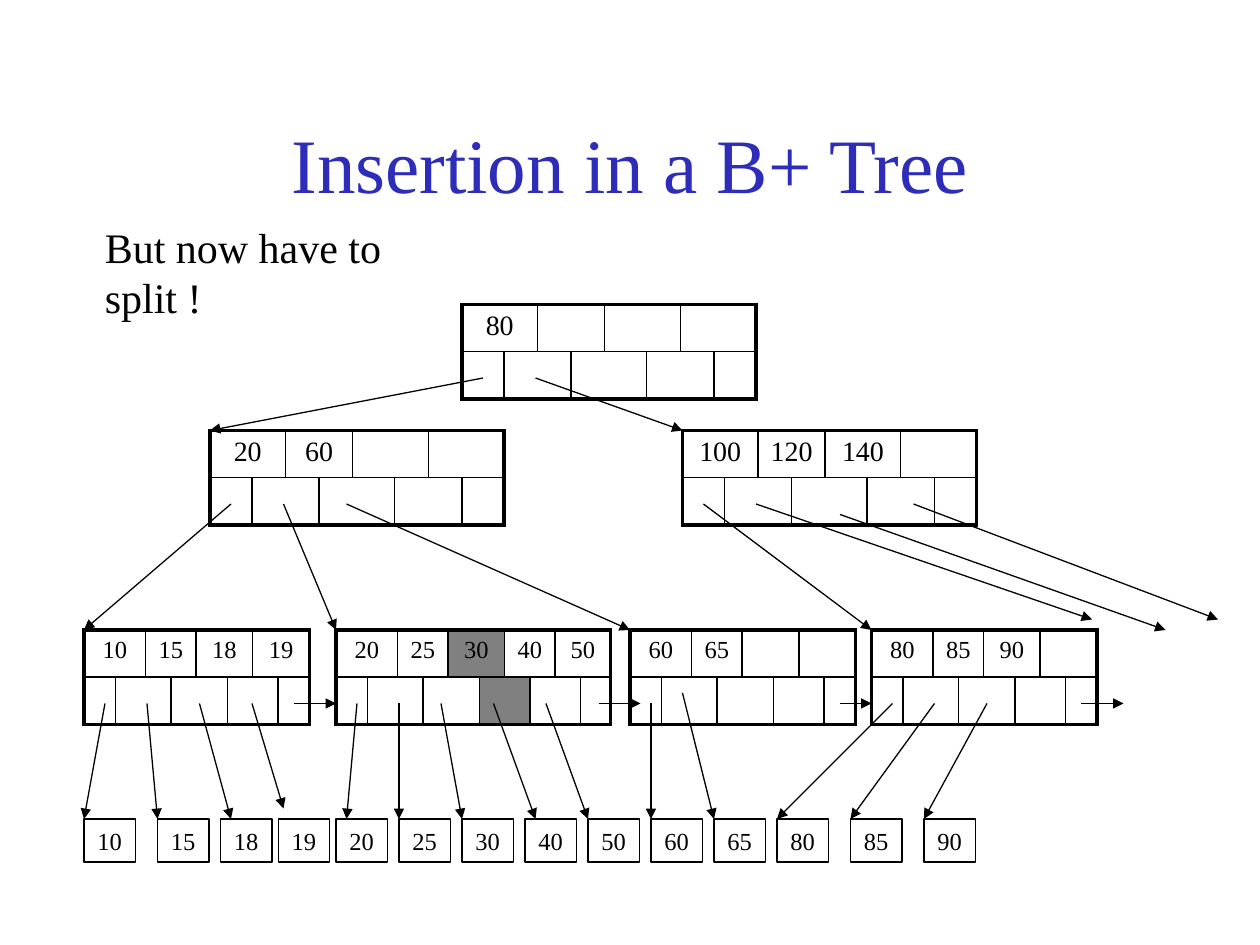
"""Build the slide showing a B+ tree leaf that has to split after an insertion."""
from lxml.etree import SubElement
from pptx import Presentation
from pptx.dml.color import RGBColor
from pptx.enum.shapes import MSO_CONNECTOR, MSO_SHAPE
from pptx.enum.text import MSO_ANCHOR, MSO_AUTO_SIZE, PP_ALIGN
from pptx.oxml.ns import qn
from pptx.util import Emu, Pt

FONT = "Times New Roman"
BLACK, BLUE, GREY = "000000", "2D2DB9", "808080"
THIN, THICK = 1, 2.25
ROW_H = 45
POINTER_Y, RECORD_Y = 670, 780
RECORD_W, RECORD_H = 49, 41

INNER_COLS = [40, 32, 32, 32, 40, 32, 32, 40]
LEAF_COLS = [30, 24, 24, 24, 30, 24, 24, 30]
FULL_LEAF_COLS = [30, 24, 24, 24, 30, 24, 24, 24, 24, 28]

NODES = [
    (440, 290, INNER_COLS, 16, ["80"], None),
    (200, 410, INNER_COLS, 16, ["20", "60"], None),
    (650, 410, INNER_COLS, 16, ["100", "120", "140"], None),
    (80, 600, LEAF_COLS, 14, ["10", "15", "18", "19"], None),
    (320, 600, FULL_LEAF_COLS, 14, ["20", "25", "30", "40", "50"], "30"),
    (600, 600, LEAF_COLS, 14, ["60", "65"], None),
    (830, 600, LEAF_COLS, 14, ["80", "85", "90"], None),
]
CHILD_ARROWS = [
    (460, 360, 200, 410), (510, 360, 650, 410),
    (220, 480, 80, 600), (270, 480, 320, 600), (330, 480, 600, 600),
    (670, 480, 830, 600), (720, 480, 1040, 590),
    (800, 490, 1110, 600), (870, 480, 1160, 590),
]
LEAF_LINKS = [(280, 320), (570, 610), (800, 830), (1030, 1070)]
RECORDS = [
    ("10", 80, (100, POINTER_Y), (80, RECORD_Y)),
    ("15", 150, (140, POINTER_Y), (150, RECORD_Y)),
    ("18", 210, (190, POINTER_Y), (220, RECORD_Y)),
    ("19", 265, (240, POINTER_Y), (270, 770)),
    ("20", 320, (340, POINTER_Y), (330, RECORD_Y)),
    ("25", 380, (380, POINTER_Y), (380, RECORD_Y)),
    ("30", 440, (420, POINTER_Y), (440, RECORD_Y)),
    ("40", 500, (470, POINTER_Y), (510, RECORD_Y)),
    ("50", 560, (520, POINTER_Y), (560, RECORD_Y)),
    ("60", 620, (620, POINTER_Y), (620, RECORD_Y)),
    ("65", 680, (650, 660), (680, RECORD_Y)),
    ("80", 740, (850, POINTER_Y), (740, RECORD_Y)),
    ("85", 810, (890, POINTER_Y), (810, RECORD_Y)),
    ("90", 880, (940, POINTER_Y), (880, RECORD_Y)),
]


def px(n):
    return Emu(n * 7620)


def rgb(color):
    return RGBColor.from_string(color)


def write(tf, text, size=14, color=BLACK, align=PP_ALIGN.CENTER):
    p = tf.paragraphs[0]
    p.alignment = align
    if not text:
        p._p.get_or_add_endParaRPr().set("sz", str(size * 100))
        return
    r = p.add_run()
    r.text = text
    r.font.name, r.font.size = FONT, Pt(size)
    r.font.color.rgb = rgb(color)


def set_borders(cell, left, right, top, bottom):
    tc_pr = cell._tc.get_or_add_tcPr()
    for side, width in zip("LRTB", (left, right, top, bottom)):
        ln = SubElement(tc_pr, qn(f"a:ln{side}"), w=str(Pt(width)))
        fill = SubElement(ln, qn("a:solidFill"))
        SubElement(fill, qn("a:srgbClr"), val=BLACK)


def add_node(s, x, y, cols, size, keys, new_key):
    n = len(cols)
    table = s.shapes.add_table(2, n, px(x), px(y), px(sum(cols)), px(2 * ROW_H)).table
    table.first_row = table.horz_banding = False
    for column, width in zip(table.columns, cols):
        column.width = px(width)
    new = keys.index(new_key) if new_key else None
    rows = [
        (list(range(0, n, 2)), keys, new),
        ([0, *range(1, n, 2)], [], None if new is None else new + 1),
    ]
    for row, (starts, labels, marked) in enumerate(rows):
        table.rows[row].height = px(ROW_H)
        for i, (start, end) in enumerate(zip(starts, starts[1:] + [n])):
            for col in range(start, end):
                cell = table.cell(row, col)
                set_borders(cell, THICK if start == 0 else THIN, THICK if end == n else THIN,
                            THIN if row else THICK, THICK if row else THIN)
                if i == marked:
                    cell.fill.solid()
                    cell.fill.fore_color.rgb = rgb(GREY)
                else:
                    cell.fill.background()
                write(cell.text_frame, labels[i] if col == start and i < len(labels) else "", size)
            if end - start > 1:
                table.cell(row, start).merge(table.cell(row, end - 1))


def add_arrow(s, x1, y1, x2, y2):
    sp = s.shapes.add_connector(MSO_CONNECTOR.STRAIGHT, px(x1), px(y1), px(x2), px(y2))
    sp.line.color.rgb, sp.line.width = rgb(BLACK), Pt(0.75)
    SubElement(sp.line._get_or_add_ln(), qn("a:tailEnd"), type="triangle")
    SubElement(sp._element.spPr, qn("a:effectLst"))


def add_record(s, x, label):
    sp = s.shapes.add_shape(MSO_SHAPE.RECTANGLE, px(x), px(RECORD_Y), px(RECORD_W), px(RECORD_H))
    sp.shadow.inherit = False
    sp.fill.background()
    sp.line.color.rgb, sp.line.width = rgb(BLACK), Pt(0.75)
    tf = sp.text_frame
    tf.word_wrap, tf.vertical_anchor = False, MSO_ANCHOR.MIDDLE
    tf.auto_size = MSO_AUTO_SIZE.SHAPE_TO_FIT_TEXT
    write(tf, label)


def main():
    prs = Presentation()
    prs.slide_width, prs.slide_height = px(1200), px(900)
    s = prs.slides.add_slide(prs.slide_layouts[5])
    title = s.shapes.title
    title.left, title.top, title.width, title.height = px(90), px(80), px(1020), px(150)
    title.text_frame.vertical_anchor = MSO_ANCHOR.MIDDLE
    write(title.text_frame, "Insertion in a B+ Tree", size=44, color=BLUE)

    tf = s.shapes.add_textbox(px(88), px(205), px(389), px(60)).text_frame
    tf.word_wrap, tf.auto_size = False, MSO_AUTO_SIZE.SHAPE_TO_FIT_TEXT
    write(tf, "But now have to split !", size=24, align=PP_ALIGN.LEFT)

    for node in NODES:
        add_node(s, *node)
    for ends in CHILD_ARROWS:
        add_arrow(s, *ends)
    for x1, x2 in LEAF_LINKS:
        add_arrow(s, x1, POINTER_Y, x2, POINTER_Y)
    for label, x, start, end in RECORDS:
        add_record(s, x, label)
        add_arrow(s, *start, *end)
    prs.save("out.pptx")


if __name__ == "__main__":
    main()
